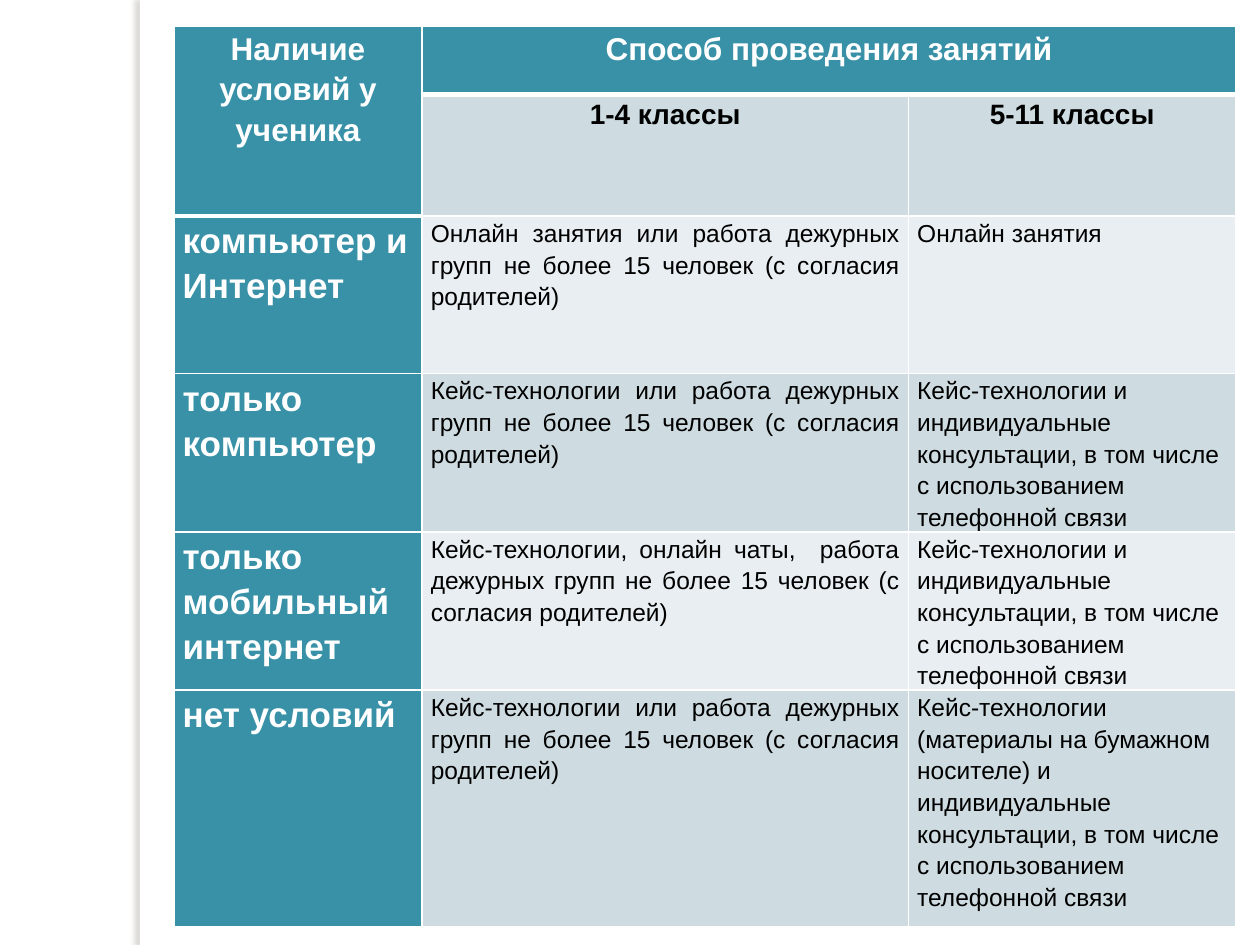
from lxml import etree
from pptx import Presentation
from pptx.dml.color import RGBColor
from pptx.enum.shapes import MSO_SHAPE
from pptx.enum.text import PP_ALIGN
from pptx.oxml.ns import qn
from pptx.util import Inches, Pt

RECTANGLE = MSO_SHAPE.RECTANGLE
LEFT, CENTER, JUSTIFY = PP_ALIGN.LEFT, PP_ALIGN.CENTER, PP_ALIGN.JUSTIFY

WHITE = RGBColor(0xFF, 0xFF, 0xFF)
BLACK = RGBColor(0, 0, 0)
TEAL = RGBColor(0x38, 0x91, 0xA7)
DARK_BAND = RGBColor(0xCE, 0xDC, 0xE1)
LIGHT_BAND = RGBColor(0xE8, 0xEE, 0xF1)
SHADOW = RGBColor(0x73, 0x6F, 0x63)

COLUMN_WIDTHS = [1.97, 3.86, 2.6]
ROW_HEIGHTS = [0.54, 0.46, 1.25, 1.25, 1.25, 1.88]
THICK_BELOW = {(0, 0), (0, 1), (0, 2), (1, 0)}

CASES_OR_GROUPS = ("Кейс-технологии или работа дежурных групп "
                   "не более 15 человек (с согласия родителей)")
CASES_AND_ADVICE = ("Кейс-технологии и индивидуальные консультации, "
                    "в том числе с использованием телефонной связи")
CONDITIONS = [
    ("компьютер и Интернет",
     "Онлайн занятия или работа дежурных групп "
     "не более 15 человек (с согласия родителей)",
     "Онлайн занятия"),
    ("только компьютер", CASES_OR_GROUPS, CASES_AND_ADVICE),
    ("только мобильный интернет",
     "Кейс-технологии, онлайн чаты,  работа дежурных групп "
     "не более 15 человек (с согласия родителей)",
     CASES_AND_ADVICE),
    ("нет условий", CASES_OR_GROUPS,
     "Кейс-технологии (материалы на бумажном носителе) и индивидуальные "
     "консультации, в том числе с использованием телефонной связи"),
]


def add_solid_color(parent, color):
    fill = etree.SubElement(parent, qn("a:solidFill"))
    return etree.SubElement(fill, qn("a:srgbClr"), val=str(color))


def add_side_strip(slide):
    strip = slide.shapes.add_shape(
        RECTANGLE, Inches(1.11), 0, Inches(0.08), Inches(7.5))
    strip.fill.solid()
    strip.fill.fore_color.rgb = WHITE
    strip.line.fill.background()
    effects = etree.SubElement(strip._element.spPr, qn("a:effectLst"))
    shadow = etree.SubElement(
        effects, qn("a:outerShdw"), blurRad=str(Pt(3)), dist=str(Pt(3)),
        dir=str(180 * 60000), algn="tl", rotWithShape="0")
    color = add_solid_color(shadow, SHADOW)
    shadow.replace(color.getparent(), color)
    etree.SubElement(color, qn("a:alpha"), val="25000")


def set_borders(cell, row, column):
    top = 3 if (row - 1, column) in THICK_BELOW and (row, column) != (1, 0) else 1
    bottom = 3 if (row, column) in THICK_BELOW else 1
    properties = cell._tc.get_or_add_tcPr()
    for side, width in zip("LRTB", (1, 1, top, bottom)):
        border = etree.SubElement(
            properties, qn(f"a:ln{side}"), w=str(Pt(width)))
        add_solid_color(border, WHITE)


def fill_cell(cell, text, background, size, color, bold, alignment,
              before=6, after=0):
    cell.fill.solid()
    cell.fill.fore_color.rgb = background
    cell.margin_left = cell.margin_right = Inches(0.07)
    cell.margin_top = cell.margin_bottom = 0
    cell.text = text
    paragraph = cell.text_frame.paragraphs[0]
    paragraph.alignment = alignment
    paragraph.line_spacing = 1.15
    paragraph.space_before = Pt(before)
    paragraph.space_after = Pt(after)
    paragraph.font.name = "Arial"
    paragraph.font.size = Pt(size)
    paragraph.font.bold = bold
    paragraph.font.color.rgb = color


def add_lessons_table(slide):
    table = slide.shapes.add_table(
        len(ROW_HEIGHTS), len(COLUMN_WIDTHS), Inches(1.38), Inches(0.21),
        Inches(sum(COLUMN_WIDTHS)), Inches(sum(ROW_HEIGHTS))).table
    for column, width in zip(table.columns, COLUMN_WIDTHS):
        column.width = Inches(width)
    for row, height in zip(table.rows, ROW_HEIGHTS):
        row.height = Inches(height)
    for row in range(len(ROW_HEIGHTS)):
        for column in range(len(COLUMN_WIDTHS)):
            set_borders(table.cell(row, column), row, column)

    table.cell(0, 0).merge(table.cell(1, 0))
    table.cell(0, 1).merge(table.cell(0, 2))
    for column, title in enumerate(
            ["Наличие условий у ученика", "Способ проведения занятий"]):
        fill_cell(table.cell(0, column), title, TEAL, 18, WHITE, True, CENTER)
    for column, grades in enumerate(["1-4 классы", "5-11 классы"], 1):
        fill_cell(table.cell(1, column), grades, DARK_BAND, 16, BLACK, True,
                  CENTER)

    for row, (condition, junior, senior) in enumerate(CONDITIONS, 2):
        band = DARK_BAND if row % 2 else LIGHT_BAND
        senior_spacing = 6 if row == 2 else 0
        fill_cell(table.cell(row, 0), condition, TEAL, 20, WHITE, True, LEFT)
        fill_cell(table.cell(row, 1), junior, band, 14, BLACK, False, JUSTIFY,
                  after=6)
        fill_cell(table.cell(row, 2), senior, band, 14, BLACK, False, LEFT,
                  before=senior_spacing, after=senior_spacing)


def main():
    presentation = Presentation()
    presentation.slide_width = Inches(10)
    presentation.slide_height = Inches(7.5)
    slide = presentation.slides.add_slide(presentation.slide_layouts[6])
    add_side_strip(slide)
    add_lessons_table(slide)
    presentation.save("out.pptx")


if __name__ == "__main__":
    main()
